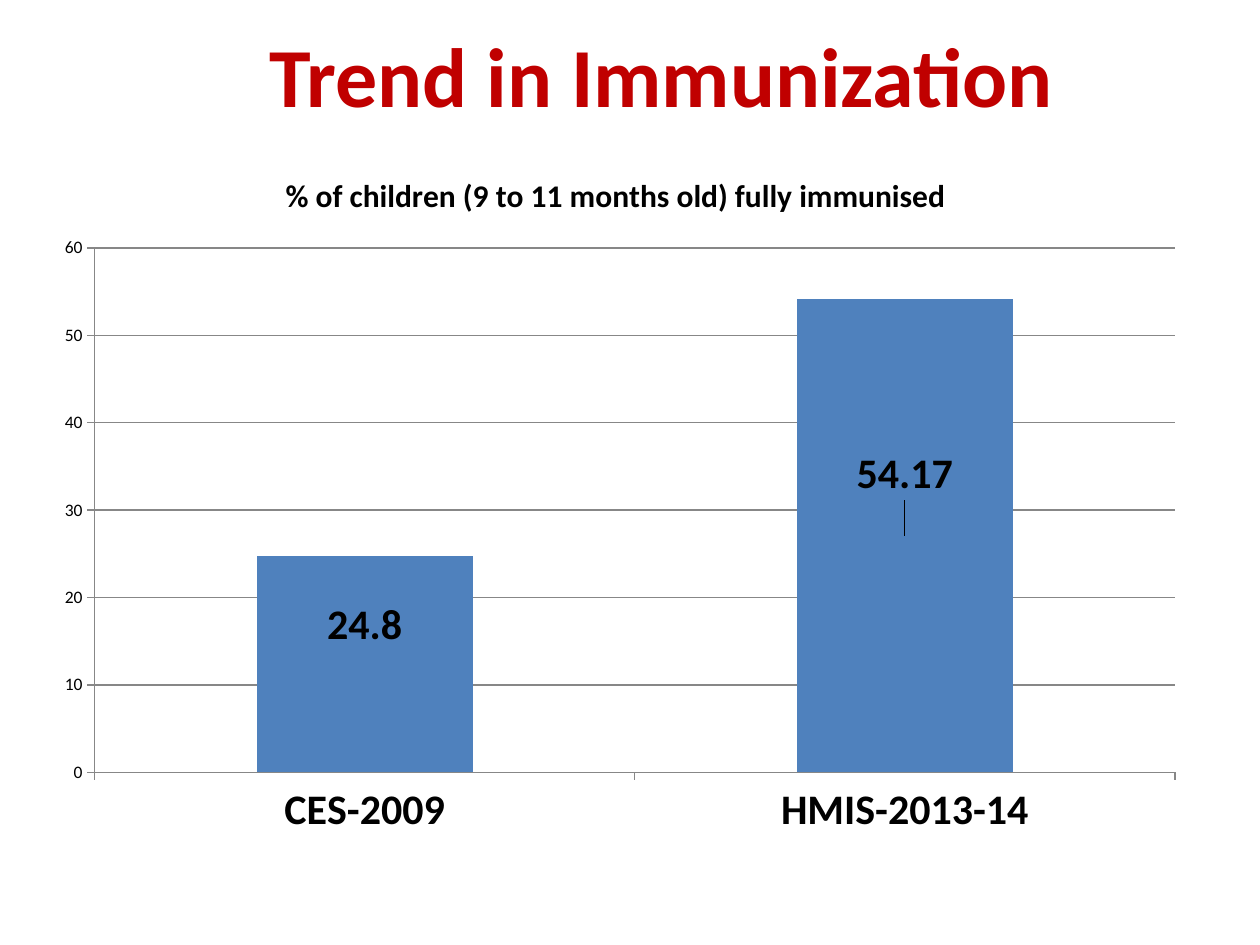
from dataclasses import dataclass

import pptx
import pptx.chart.data
import pptx.dml.color
import pptx.enum.chart
import pptx.enum.text
import pptx.oxml
import pptx.util

FONT = "Calibri"
INK = "000000"
RULE = "878787"
SLIDE_WIDTH = pptx.util.Inches(10)
SLIDE_HEIGHT = pptx.util.Inches(7.5)
MEASURE = "% of children (9 to 11 months old) fully immunised "


@dataclass(frozen=True)
class Area:
    left: float
    top: float
    width: float
    height: float

    def on_slide(self) -> tuple[int, int, int, int]:
        return (
            int(self.left * SLIDE_WIDTH),
            int(self.top * SLIDE_HEIGHT),
            int(self.width * SLIDE_WIDTH),
            int(self.height * SLIDE_HEIGHT),
        )


@dataclass(frozen=True)
class Survey:
    label: str
    immunised: float
    label_shift: float


SURVEYS = [
    Survey("CES-2009", 24.8, -0.055),
    Survey("HMIS-2013-14", 54.17, -0.087),
]
HEADING_AREA = Area(0.075, 0.056, 0.9, 0.044)
CHART_AREA = Area(0.033, 0.156, 0.917, 0.744)
PLOT_AREA = Area(0.046, 0.143, 0.935, 0.746)


def rgb(value: str) -> pptx.dml.color.RGBColor:
    return pptx.dml.color.RGBColor.from_string(value)


def set_font(font, size: float, bold: bool = False, color: str = INK) -> None:
    font.name = FONT
    font.size = pptx.util.Pt(size)
    font.bold = bold
    font.color.rgb = rgb(color)


def rule_line(line) -> None:
    line.color.rgb = rgb(RULE)
    line.width = pptx.util.Pt(0.75)


def manual_layout(settings: dict[str, object]):
    namespace = pptx.oxml.ns.nsdecls("c")
    entries = "".join(f'<c:{key} val="{value}"/>' for key, value in settings.items())
    return pptx.oxml.parse_xml(
        f"<c:layout {namespace}><c:manualLayout>{entries}</c:manualLayout></c:layout>"
    )


def add_heading(slide, text: str) -> None:
    frame = slide.shapes.add_textbox(*HEADING_AREA.on_slide()).text_frame
    frame.word_wrap = True
    frame.vertical_anchor = pptx.enum.text.MSO_ANCHOR.MIDDLE
    heading = frame.paragraphs[0]
    heading.text = text
    heading.alignment = pptx.enum.text.PP_ALIGN.CENTER
    set_font(heading.font, 48, True, "C00000")


def fix_plot_area(chart) -> None:
    plot_area = chart.element.chart.plotArea
    for layout in plot_area.findall(pptx.oxml.ns.qn("c:layout")):
        plot_area.remove(layout)
    settings = {
        "layoutTarget": "inner",
        "xMode": "edge",
        "yMode": "edge",
        "x": PLOT_AREA.left,
        "y": PLOT_AREA.top,
        "w": PLOT_AREA.width,
        "h": PLOT_AREA.height,
    }
    plot_area.insert(0, manual_layout(settings))


def style_axes(chart) -> None:
    categories, values = chart.category_axis, chart.value_axis
    for axis in (categories, values):
        axis.major_tick_mark = pptx.enum.chart.XL_TICK_MARK.OUTSIDE
        axis.minor_tick_mark = pptx.enum.chart.XL_TICK_MARK.NONE
        rule_line(axis.format.line)
    set_font(categories.tick_labels.font, 24, True)
    set_font(values.tick_labels.font, 10)
    values.minimum_scale, values.maximum_scale, values.major_unit = 0, 60, 10
    values.has_major_gridlines = True
    rule_line(values.major_gridlines.format.line)


def style_columns(chart, surveys: list[Survey]) -> None:
    plot = chart.plots[0]
    plot.gap_width = 150
    plot.vary_by_categories = False
    columns = plot.series[0]
    columns.format.fill.solid()
    columns.format.fill.fore_color.rgb = rgb("4F81BD")
    labels = columns.data_labels
    labels.show_value = True
    labels.position = pptx.enum.chart.XL_LABEL_POSITION.CENTER
    set_font(labels.font, 24, True)
    for index, survey in enumerate(surveys):
        point_label = columns.points[index].data_label
        set_font(point_label.font, 24, True)
        point_label.position = pptx.enum.chart.XL_LABEL_POSITION.CENTER
        label_xml = labels._element.findall(pptx.oxml.ns.qn("c:dLbl"))[index]
        label_xml.insert(1, manual_layout({"x": 0, "y": survey.label_shift}))


def add_survey_chart(slide, surveys: list[Survey]) -> None:
    data = pptx.chart.data.CategoryChartData()
    data.categories = [survey.label for survey in surveys]
    data.add_series(MEASURE, [survey.immunised for survey in surveys])
    chart = slide.shapes.add_chart(
        pptx.enum.chart.XL_CHART_TYPE.COLUMN_CLUSTERED, *CHART_AREA.on_slide(), data
    ).chart
    set_font(chart.font, 10)
    chart.has_legend = False
    chart.has_title = True
    chart.chart_title.include_in_layout = False
    title = chart.chart_title.text_frame.paragraphs[0]
    title.text = MEASURE
    set_font(title.font, 18, True)
    fix_plot_area(chart)
    style_axes(chart)
    style_columns(chart, surveys)


def main() -> None:
    deck = pptx.Presentation()
    deck.slide_width, deck.slide_height = SLIDE_WIDTH, SLIDE_HEIGHT
    slide = deck.slides.add_slide(deck.slide_layouts[6])
    add_heading(slide, "Trend in Immunization")
    add_survey_chart(slide, SURVEYS)
    deck.save("out.pptx")


if __name__ == "__main__":
    main()
